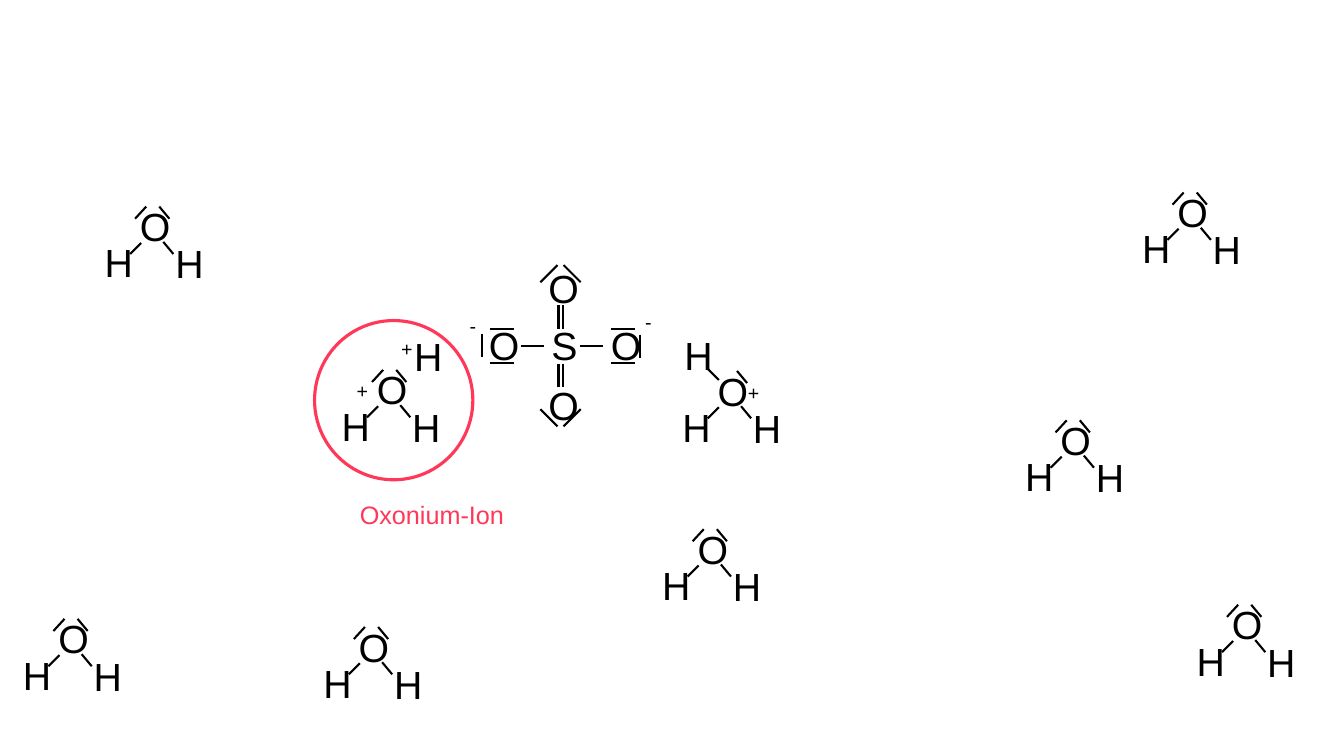
from lxml.etree import SubElement
from pptx import Presentation
from pptx.dml.color import RGBColor
from pptx.enum.shapes import MSO_CONNECTOR, MSO_SHAPE
from pptx.enum.text import MSO_AUTO_SIZE
from pptx.oxml.ns import qn
from pptx.util import Inches, Pt

BLACK, RED = "000000", "FF3859"
FONT = "Arial"

# Top left corner of each oxygen letter box
WATERS = [(1.29, 1.96), (3.46, 6.13), (10.42, 4.08), (6.82, 5.16),
          (11.58, 1.82), (12.12, 5.91), (0.48, 6.05), (3.64, 3.58)]
OXONIUM = (7.02, 3.59)

# Parts of a molecule, relative to its oxygen box
WATER_ATOMS = [("H", -0.35, 0.36), ("H", 0.35, 0.37), ("O", 0, 0)]
WATER_BONDS = [(0, 0.56, 0.11, 0.45), (0.43, 0.56, 0.33, 0.44)]
LEFT_PAIR = (0.05, 0.21, 0.16, 0.09)
RIGHT_PAIR = (0.39, 0.21, 0.29, 0.09)
THIRD_HYDROGEN = ("H", -0.33, -0.35)
THIRD_BOND = (0, 0.07, 0.11, 0.18)

# Sulfate ion, relative to the centre of the sulfur atom
SULFUR = (5.56, 3.43)
SULFATE_ATOMS = [("S", -0.19, -0.29), ("O", -0.22, -0.86), ("O", -0.22, 0.3),
                 ("O", 0.4, -0.29), ("O", -0.81, -0.29)]
SINGLE_BONDS = [(-0.39, 0, -0.16, 0), (0.19, 0, 0.42, 0)]
DOUBLE_BONDS = [(x, y, x, y + 0.23) for x in (-0.02, 0.02) for y in (-0.4, 0.18)]
FLAT_PAIRS = [(x, y, x + 0.24, y) for x in (-0.7, 0.5) for y in (-0.17, 0.17)]
SIDE_PAIRS = [(-0.78, -0.12, -0.78, 0.11), (0.79, -0.11, 0.79, 0.12)]
SLANTED_PAIRS = [(side * 0.2, end * 0.63, side * 0.03, end * 0.8)
                 for side in (-1, 1) for end in (-1, 1)]

# Charges and the free proton, on the slide
CHARGES = [("-", 6.3, 3.03), ("-", 4.56, 3.07), ("+", 7.32, 3.73),
           ("+", 3.44, 3.71), ("+", 3.88, 3.29)]
PROTON = ("H", 4.01, 3.25)
RING = (3.12, 3.18, 1.57, 1.58)
CAPTION = ("Oxonium-Ion", 3.47, 4.9)

prs = Presentation()
prs.slide_width, prs.slide_height = Inches(13.33), Inches(7.5)
s = prs.slides.add_slide(prs.slide_layouts[6])


def rgb(color):
    return RGBColor.from_string(color)


def label(text, x, y, w=0.33, h=0.57, size=28, color=BLACK):
    tf = s.shapes.add_textbox(Inches(x), Inches(y), Inches(w), Inches(h)).text_frame
    tf.word_wrap = True
    tf.auto_size = MSO_AUTO_SIZE.SHAPE_TO_FIT_TEXT
    p = tf.paragraphs[0]
    p.text = text
    p.font.name, p.font.size = FONT, Pt(size)
    p.font.color.rgb = rgb(color)


def stroke(x1, y1, x2, y2):
    line = s.shapes.add_connector(MSO_CONNECTOR.STRAIGHT, Inches(x1), Inches(y1),
                                  Inches(x2), Inches(y2))
    line.line.color.rgb = rgb(BLACK)
    line.line.width = Pt(1.5)
    SubElement(line._element.spPr, qn("a:effectLst"))


def molecule(origin, atoms, strokes):
    ox, oy = origin
    for text, x, y in atoms:
        label(text, ox + x, oy + y)
    for x1, y1, x2, y2 in strokes:
        stroke(ox + x1, oy + y1, ox + x2, oy + y2)


# Molecules
for origin in WATERS:
    molecule(origin, WATER_ATOMS, WATER_BONDS + [LEFT_PAIR, RIGHT_PAIR])
molecule(OXONIUM, WATER_ATOMS + [THIRD_HYDROGEN],
         WATER_BONDS + [THIRD_BOND, RIGHT_PAIR])
molecule(SULFUR, SULFATE_ATOMS,
         SINGLE_BONDS + DOUBLE_BONDS + FLAT_PAIRS + SIDE_PAIRS + SLANTED_PAIRS)

# Proton and charges
label(*PROTON)
for charge in CHARGES:
    label(*charge, w=0.23, h=0.34, size=14)

# Highlighted ion
ring = s.shapes.add_shape(MSO_SHAPE.OVAL, *map(Inches, RING))
ring.shadow.inherit = False
ring.fill.background()
ring.line.color.rgb = rgb(RED)
ring.line.width = Pt(2.25)
label(*CAPTION, w=2.22, h=0.4, size=18, color=RED)

prs.save("out.pptx")
